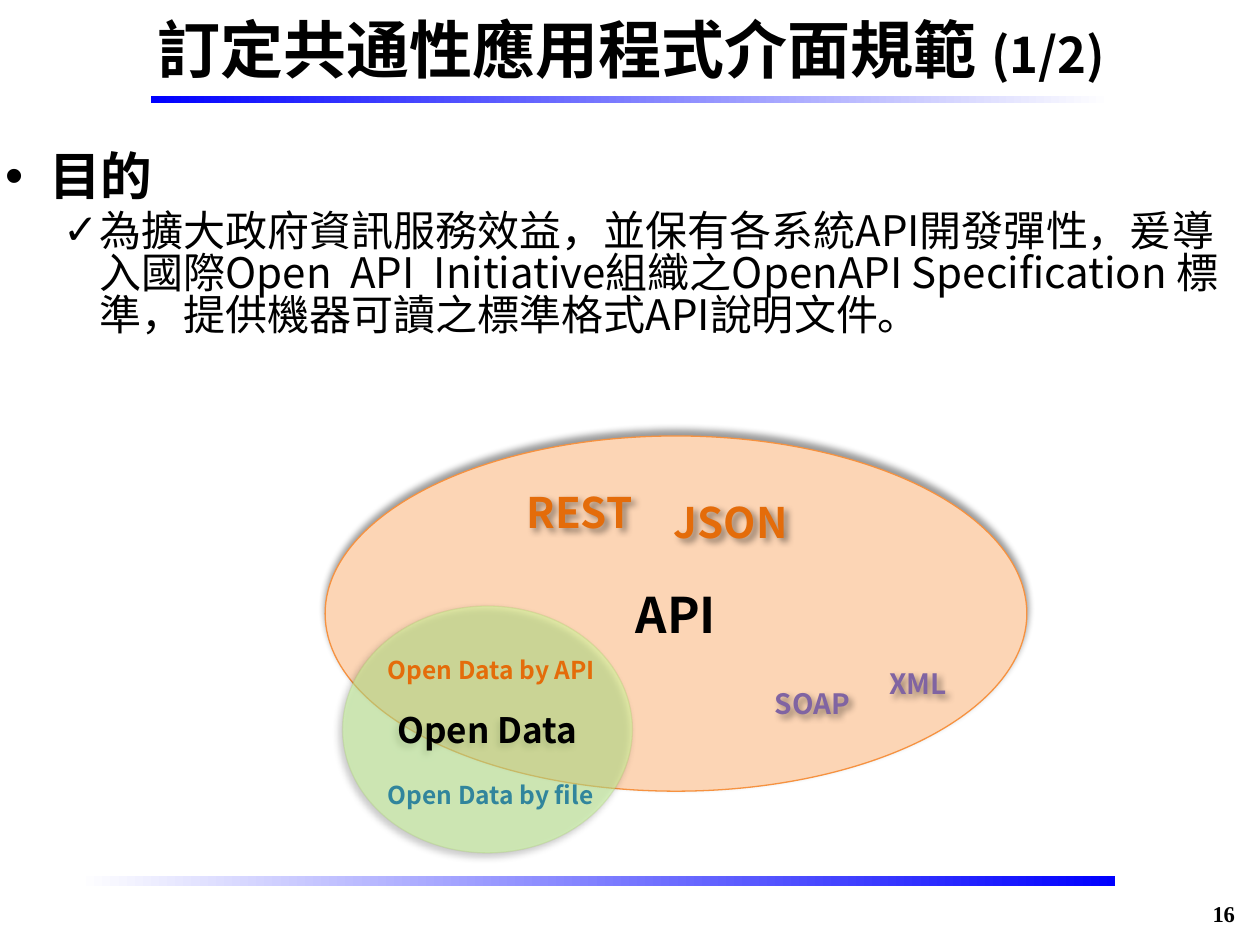
import pptx
import pptx.util
import pptx.dml.color
import pptx.enum.shapes
import pptx.enum.text
import pptx.oxml
import pptx.oxml.ns
from lxml import etree

SANS = "Noto Sans CJK SC"
SERIF = "Times New Roman"
HUES = {
    "black": "000000", "white": "FFFFFF", "blue": "0000FF",
    "peach": "FCD5B5", "rim": "F69240", "lime": "CCFF9A", "edge": "98B955",
    "orange": "E46C0A", "purple": "8064A2", "teal": "31859C",
}
LABELS = [
    ("REST", 293.8, 274.3, 84.2, 36, 24, "orange", True),
    ("XML", 501.1, 377.3, 61.9, 26.6, 16, "purple", True),
    ("Open Data by API", 214.6, 370.8, 133.9, 23.8, 14, "orange", False),
    ("Open Data by file", 214.6, 442.1, 133.9, 23.8, 14, "teal", False),
    ("JSON", 378, 280.1, 84.2, 36, 24, "orange", True),
    ("SOAP", 435.6, 388.8, 77, 26.6, 16, "purple", True),
]
AIM = (
    "為擴大政府資訊服務效益，並保有各系統API開發彈性，"
    "爰導入國際Open  API  Initiative組織之OpenAPI Specification "
    "標準，提供機器可讀之標準格式API說明文件。"
)


def rgb(hue):
    return pptx.dml.color.RGBColor.from_string(HUES[hue])


def node(root, tag, **attrs):
    return etree.SubElement(root, pptx.oxml.ns.qn(tag), **attrs)


def place(shape, *rect):
    shape.left, shape.top, shape.width, shape.height = map(pptx.util.Pt, rect)


def write(para, text, size=24, hue="black", font=SANS, bold=True, align=None):
    run = para.add_run()
    run.text = text
    run.font.size = pptx.util.Pt(size)
    run.font.bold = bold
    run.font.name = font
    run.font.color.rgb = rgb(hue)
    node(run.font._element, "a:ea", typeface=font)
    if align:
        para.alignment = getattr(pptx.enum.text.PP_ALIGN, align)


def shade(shape, angle):
    shape.shadow.inherit = False
    list_ = shape._element.spPr.find(pptx.oxml.ns.qn("a:effectLst"))
    outer = node(
        list_, "a:outerShdw", blurRad=str(pptx.util.Pt(4)),
        dist=str(pptx.util.Pt(3)), dir=str(angle * 60000), rotWithShape="0",
    )
    tint = node(outer, "a:srgbClr", val=HUES["black"])
    node(tint, "a:alpha", val="40000")


def fade(fill, share):
    for tint in fill.iter(pptx.oxml.ns.qn("a:srgbClr")):
        node(tint, "a:alpha", val=str(share * 1000))


def bar(slide, rect, hues):
    kind = pptx.enum.shapes.MSO_SHAPE.RECTANGLE
    shape = slide.shapes.add_shape(kind, *map(pptx.util.Pt, rect))
    shape.shadow.inherit = False
    shape.line.fill.background()
    shape.fill.gradient()
    shape.fill.gradient_angle = 0
    for stop, hue, spot in zip(shape.fill.gradient_stops, hues, (0, 1)):
        stop.color.rgb = rgb(hue)
        stop.position = spot


def oval(slide, text, rect, size, fill, line, angle, alpha=None):
    kind = pptx.enum.shapes.MSO_SHAPE.OVAL
    shape = slide.shapes.add_shape(kind, *map(pptx.util.Pt, rect))
    shape.fill.solid()
    shape.fill.fore_color.rgb = rgb(fill)
    shape.line.color.rgb = rgb(line)
    shape.line.width = pptx.util.Pt(0.75)
    if alpha:
        props = shape._element.spPr
        fade(props.find(pptx.oxml.ns.qn("a:solidFill")), alpha[0])
        fade(props.find(pptx.oxml.ns.qn("a:ln")), alpha[1])
    shade(shape, angle)
    frame = shape.text_frame
    frame.word_wrap = False
    frame.vertical_anchor = pptx.enum.text.MSO_ANCHOR.MIDDLE
    write(frame.paragraphs[0], text, size=size, align="CENTER")


def label(slide, text, rect, grow=True, shadow=False, **style):
    box = slide.shapes.add_textbox(*map(pptx.util.Pt, rect))
    box.text_frame.word_wrap = True
    if grow:
        box.text_frame.auto_size = pptx.enum.text.MSO_AUTO_SIZE.SHAPE_TO_FIT_TEXT
    if shadow:
        shade(box, 45)
    write(box.text_frame.paragraphs[0], text, **style)


def item(para, text, mark, left, hang, gap, **style):
    props = para._p.get_or_add_pPr()
    props.set("marL", str(pptx.util.Pt(left)))
    props.set("indent", str(pptx.util.Pt(-hang)))
    node(props, "a:buChar", char=mark)
    para.line_spacing = 0.83
    para.space_before = pptx.util.Pt(gap)
    write(para, text, **style)


def head(slide):
    title = slide.shapes.title
    place(title, 36.7, 2.2, 648, 51.1)
    frame = title.text_frame
    frame.auto_size = pptx.enum.text.MSO_AUTO_SIZE.NONE
    frame.vertical_anchor = pptx.enum.text.MSO_ANCHOR.MIDDLE
    para = frame.paragraphs[0]
    write(para, "訂定共通性應用程式介面規範 ", size=36, align="CENTER")
    write(para, "(1/2)", size=28)


def body(slide):
    shape = slide.placeholders[1]
    place(shape, -4.3, 81.4, 707.8, 401)
    frame = shape.text_frame
    frame.auto_size = pptx.enum.text.MSO_AUTO_SIZE.NONE
    frame.margin_top = pptx.util.Pt(7)
    item(frame.paragraphs[0], "目的", "•", 25.2, 25.2, 0, size=29.5)
    para = frame.add_paragraph()
    para.level = 1
    item(para, AIM, "✓", 54, 20.9, 4, size=24, bold=False)


def main():
    deck = pptx.Presentation()
    deck.slide_width = pptx.util.Pt(720)
    deck.slide_height = pptx.util.Pt(540)
    slide = deck.slides.add_slide(deck.slide_layouts[1])
    bar(slide, (44.6, 500.4, 592.6, 5.8), ("white", "blue"))
    bar(slide, (86.4, 54.7, 548.6, 4.3), ("blue", "white"))
    head(slide)
    body(slide)
    oval(slide, "API", (185.8, 249.1, 401, 203), 28, "peach", "rim", 270)
    oval(slide, "Open Data", (195.8, 346.3, 165.6, 141.1), 20,
         "lime", "edge", 135, alpha=(50, 20))
    for text, *rect, size, hue, shadow in LABELS:
        label(slide, text, rect, shadow=shadow, size=size, hue=hue)
    label(slide, "16", (657.4, 510.5, 55.4, 17.3), grow=False,
          size=12.9, font=SERIF, align="RIGHT")
    deck.save("out.pptx")


if __name__ == "__main__":
    main()
